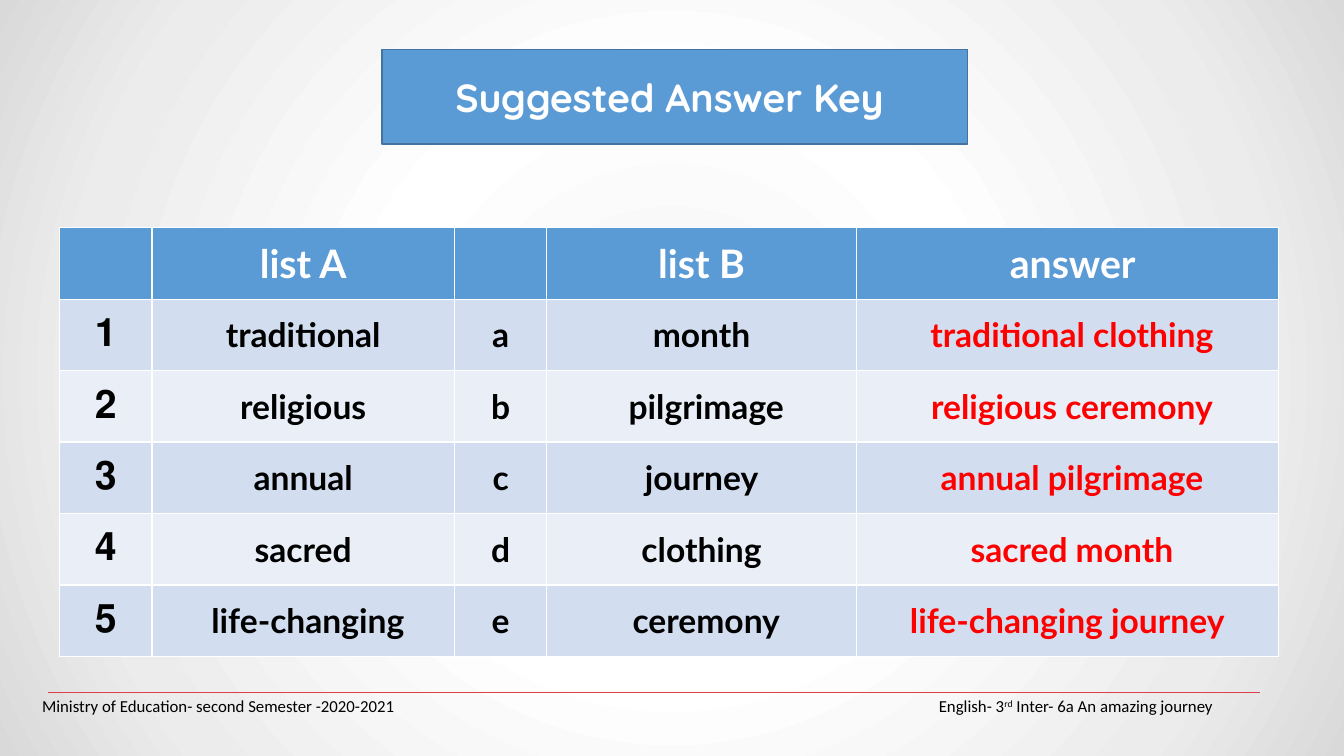
"""Build the answer key slide for matching list A with list B."""
from typing import NamedTuple

from lxml import etree
from pptx import Presentation
from pptx import util as u
from pptx.dml import color as dml
from pptx.enum import shapes, text
from pptx.oxml import ns

COLORS = {
    "blue": "5B9BD5", "outline": "43739E", "white": "FFFFFF", "black": "000000",
    "red": "FF0000", "rule": "D9414B", "odd": "D2DEEF", "even": "EAEFF7",
}
BACKDROP = ((0, "F2F2F2"), (39, "FFFFFF"), (78, "ECECEC"), (100, "D9D9D9"))


class Match(NamedTuple):
    """One row of the answer key."""
    number: str
    list_a: str
    letter: str
    list_b: str
    answer: str


class Credit(NamedTuple):
    """One footer text, given as pairs of wording and raised flag."""
    left: float
    width: float
    phrases: tuple[tuple[str, bool], ...]


HEADINGS = Match("", "list A", "", "list B", "answer ")
MATCHES = (
    Match("1", "traditional", "a", "month", "traditional clothing "),
    Match("2", "religious", "b", "pilgrimage ", "religious ceremony "),
    Match("3", "annual", "c", "journey", "annual pilgrimage "),
    Match("4", "sacred", "d", "clothing", "sacred month "),
    Match("5", "life-changing ", "e", "ceremony ", "life-changing journey"),
)
COLUMN_WIDTHS = (2.33, 7.62, 2.33, 7.8, 10.63)
ROW_HEIGHT = 1.8
CREDITS = (
    Credit(1.06, 12, (("Ministry of Education- second Semester -2020-2021", False),)),
    Credit(23.66, 8, (("English- 3", False), ("rd", True),
                      (" Inter- 6a An amazing journey", False))),
)


def rgb(name: str) -> dml.RGBColor:
    """Return the named colour."""
    return dml.RGBColor.from_string(COLORS[name])


def write(frame, wording: str, *, font: str, size: float, color: str = "black",
          bold: bool = False, align=text.PP_ALIGN.CENTER, rtl: bool = False,
          raised: bool = False) -> None:
    """Add formatted wording to the first paragraph of a text frame."""
    paragraph = frame.paragraphs[0]
    paragraph.alignment = align
    if rtl:
        paragraph._p.get_or_add_pPr().set("rtl", "1")
    run = paragraph.add_run()
    run.text = wording
    run.font.name, run.font.size, run.font.bold = font, u.Pt(size), bold
    run.font.color.rgb = rgb(color)
    if raised:
        run._r.get_or_add_rPr().set("baseline", "30000")


def paint_backdrop(slide) -> None:
    """Fill the background with a gradient that spreads from the centre."""
    fill = slide.background.fill
    fill.gradient()
    gradient = next(slide.element.iter(ns.qn("a:gradFill")))
    for child in list(gradient):
        gradient.remove(child)
    stops = etree.SubElement(gradient, ns.qn("a:gsLst"))
    for position, color in BACKDROP:
        stop = etree.SubElement(stops, ns.qn("a:gs"), pos=str(position * 1000))
        etree.SubElement(stop, ns.qn("a:srgbClr"), val=color)
    spread = etree.SubElement(gradient, ns.qn("a:path"), path="circle")
    etree.SubElement(spread, ns.qn("a:fillToRect"), dict.fromkeys("ltrb", "50000"))


def add_heading(slide) -> None:
    """Format the title placeholder as a blue banner."""
    banner = slide.shapes.title
    banner.left, banner.top = u.Cm(9.63), u.Cm(1.24)
    banner.width, banner.height = u.Cm(14.76), u.Cm(2.39)
    banner.fill.solid()
    banner.fill.fore_color.rgb = rgb("blue")
    banner.line.color.rgb = rgb("outline")
    banner.line.width = u.Pt(1)
    frame = banner.text_frame
    frame.auto_size = text.MSO_AUTO_SIZE.NONE
    frame.vertical_anchor = text.MSO_ANCHOR.MIDDLE
    write(frame, "Suggested Answer Key ", font="Quicksand", size=28, color="white", bold=True)


def add_answer_key(slide) -> None:
    """Add the table of matched words."""
    rows = (HEADINGS, *MATCHES)
    key = slide.shapes.add_table(
        len(rows), len(HEADINGS), u.Cm(1.5), u.Cm(5.74),
        u.Cm(sum(COLUMN_WIDTHS)), u.Cm(ROW_HEIGHT * len(rows))).table
    for column, width in zip(key.columns, COLUMN_WIDTHS):
        column.width = u.Cm(width)
    for index, match in enumerate(rows):
        key.rows[index].height = u.Cm(ROW_HEIGHT)
        heading = index == 0
        band = "blue" if heading else "odd" if index % 2 else "even"
        for position, (field, wording) in enumerate(zip(Match._fields, match)):
            cell = key.cell(index, position)
            cell.fill.solid()
            cell.fill.fore_color.rgb = rgb(band)
            cell.vertical_anchor = text.MSO_ANCHOR.MIDDLE
            if wording:
                color = "white" if heading else "red" if field == "answer" else "black"
                write(cell.text_frame, wording, font="Lato", color=color, bold=True, rtl=True,
                      size=28 if heading or field == "number" else 24)


def add_footer(slide) -> None:
    """Add the red rule and the two credits below it."""
    rule = slide.shapes.add_connector(
        shapes.MSO_CONNECTOR.STRAIGHT, u.Cm(1.22), u.Cm(17.46), u.Cm(31.75), u.Cm(17.46))
    rule.line.color.rgb = rgb("rule")
    rule.line.width = u.Pt(0.75)
    etree.SubElement(rule._element.spPr, ns.qn("a:effectLst"))
    for credit in CREDITS:
        frame = slide.shapes.add_textbox(
            u.Cm(credit.left), u.Cm(17.49), u.Cm(credit.width), u.Cm(0.6)).text_frame
        frame.word_wrap = True
        frame.vertical_anchor = text.MSO_ANCHOR.MIDDLE
        frame.margin_left = frame.margin_right = frame.margin_top = frame.margin_bottom = 0
        for wording, raised in credit.phrases:
            write(frame, wording, font="Calibri", size=12, align=text.PP_ALIGN.LEFT, raised=raised)


def main() -> None:
    """Build and save the slide."""
    deck = Presentation()
    deck.slide_width, deck.slide_height = u.Cm(33.87), u.Cm(19.05)
    slide = deck.slides.add_slide(deck.slide_layouts[5])
    paint_backdrop(slide)
    add_heading(slide)
    add_answer_key(slide)
    add_footer(slide)
    deck.save("out.pptx")


if __name__ == "__main__":
    main()
